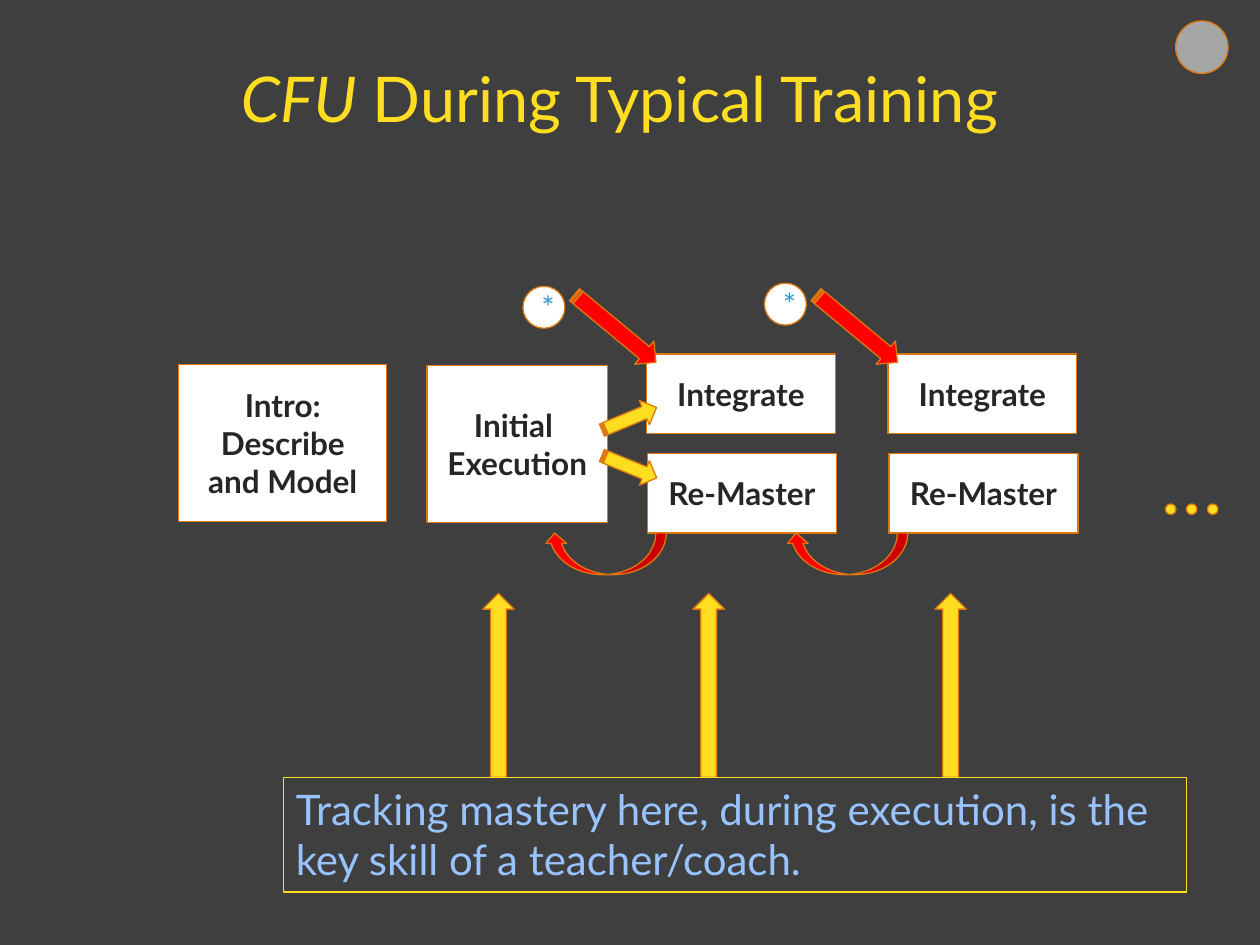
from dataclasses import dataclass

from pptx import Presentation
from pptx.dml.color import RGBColor
from pptx.enum.shapes import MSO_SHAPE as Preset
from pptx.enum.text import MSO_ANCHOR as Anchor, PP_ALIGN as Align
from pptx.util import Pt

BACKGROUND = "3F3F3F"
WHITE = "FFFFFF"
ORANGE = "DD7811"
YELLOW = "FFDE22"
RED = "FF0000"
GREY = "A6A6A6"
DARK = "262626"
STAR_BLUE = "3399CC"
PALE_BLUE = "99C3FF"
CYCLE_STEP = 138


@dataclass(frozen=True)
class Area:
    left: float
    top: float
    width: float
    height: float

    def shifted(self, dx: float) -> "Area":
        return Area(self.left + dx, self.top, self.width, self.height)


@dataclass(frozen=True)
class Box:
    text: str
    area: Area


@dataclass(frozen=True)
class Arrow:
    preset: Preset
    area: Area
    color: str
    rotation: float = 0
    flipped: bool = False
    shaft: float = 0.5


def rgb(color: str) -> RGBColor:
    return RGBColor.from_string(color)


def write(shape, text: str, *, size: float = 18, color: str = DARK, bold: bool = False,
          italic_lead: str = "", align: Align = Align.CENTER,
          anchor: Anchor = Anchor.MIDDLE) -> None:
    frame = shape.text_frame
    frame.word_wrap = True
    frame.vertical_anchor = anchor
    for number, line in enumerate(text.split("\n")):
        paragraph = frame.add_paragraph() if number else frame.paragraphs[0]
        paragraph.alignment = align
        for part, italic in ((italic_lead, True), (line, False)):
            if part:
                run = paragraph.add_run()
                run.text = part
                font = run.font
                font.name = "Lato"
                font.size = Pt(size)
                font.bold = bold
                font.italic = italic
                font.color.rgb = rgb(color)


def place(shape, area: Area) -> None:
    shape.left, shape.top = Pt(area.left), Pt(area.top)
    shape.width, shape.height = Pt(area.width), Pt(area.height)


def draw_shape(slide, preset: Preset, area: Area, fill: str | None, line: str = ORANGE):
    shape = slide.shapes.add_shape(
        preset, Pt(area.left), Pt(area.top), Pt(area.width), Pt(area.height))
    shape.shadow.inherit = False
    if fill:
        shape.fill.solid()
        shape.fill.fore_color.rgb = rgb(fill)
    else:
        shape.fill.background()
    shape.line.color.rgb = rgb(line)
    shape.line.width = Pt(0.75)
    return shape


def draw_box(slide, box: Box) -> None:
    write(draw_shape(slide, Preset.RECTANGLE, box.area, WHITE), box.text, bold=True)


def draw_arrow(slide, arrow: Arrow, dx: float = 0) -> None:
    shape = draw_shape(slide, arrow.preset, arrow.area.shifted(dx), arrow.color)
    shape.rotation = arrow.rotation
    if arrow.shaft != 0.5:
        shape.adjustments[0] = arrow.shaft
    if arrow.flipped:
        shape.element.spPr.xfrm.set("flipH", "1")


def draw_star(slide, area: Area) -> None:
    write(draw_shape(slide, Preset.OVAL, area, WHITE), "*", color=STAR_BLUE)


STAGES = [
    Box("Intro: Describe and Model", Area(102.2, 208.1, 118.8, 90)),
    Box("Initial \nExecution", Area(244.1, 208.8, 103, 90)),
]
CYCLE_BOXES = [
    Box("Integrate", Area(369.4, 202.3, 108, 45.4)),
    Box("Re-Master", Area(370, 259.2, 108, 45.4)),
]
CYCLE_ARROWS = [
    Arrow(Preset.CURVED_UP_ARROW, Area(311, 304.6, 69.8, 23.8), RED, flipped=True),
    Arrow(Preset.STRIPED_RIGHT_ARROW, Area(321.3, 179.1, 60.5, 17.3), RED, 39.7, shaft=0.52),
]
BRANCH_ARROWS = [
    Arrow(Preset.STRIPED_RIGHT_ARROW, Area(342.7, top, 33.8, 15.1), YELLOW, angle)
    for top, angle in ((231.8, 337.4), (259.2, 22.2))
]
TRACKING_LEFTS = (275.8, 396, 534.2)
STAR_AREAS = [Area(298.8, 163.6, 24, 24), Area(436.8, 161.8, 24, 24)]


def main() -> None:
    deck = Presentation()
    deck.slide_width, deck.slide_height = Pt(720), Pt(540)
    slide = deck.slides.add_slide(deck.slide_layouts[5])
    slide.background.fill.solid()
    slide.background.fill.fore_color.rgb = rgb(BACKGROUND)

    title = slide.shapes.title
    place(title, Area(30, 21.6, 648, 68.4))
    write(title, " During Typical Training", size=36, color=YELLOW, italic_lead="CFU")

    draw_shape(slide, Preset.OVAL, Area(671.8, 12, 30, 30), GREY)
    for stage in STAGES:
        draw_box(slide, stage)
    for cycle in range(2):
        dx = cycle * CYCLE_STEP
        for box in CYCLE_BOXES:
            draw_box(slide, Box(box.text, box.area.shifted(dx)))
        for arrow in CYCLE_ARROWS:
            draw_arrow(slide, arrow, dx)
    for arrow in BRANCH_ARROWS:
        draw_arrow(slide, arrow)
    for area in STAR_AREAS:
        draw_star(slide, area)
    for left in TRACKING_LEFTS:
        draw_arrow(slide, Arrow(Preset.UP_ARROW, Area(left, 339.1, 18, 105.1), YELLOW))
    for dot in range(3):
        draw_shape(slide, Preset.OVAL, Area(666 + 12 * dot, 288, 6, 6), YELLOW)

    caption = draw_shape(
        slide, Preset.RECTANGLE, Area(162, 444.2, 516.2, 65.5), None, YELLOW)
    write(caption, "Tracking mastery here, during execution, is the key skill of a teacher/coach.",
          size=24, color=PALE_BLUE, align=Align.LEFT, anchor=Anchor.TOP)

    deck.save("out.pptx")


if __name__ == "__main__":
    main()
